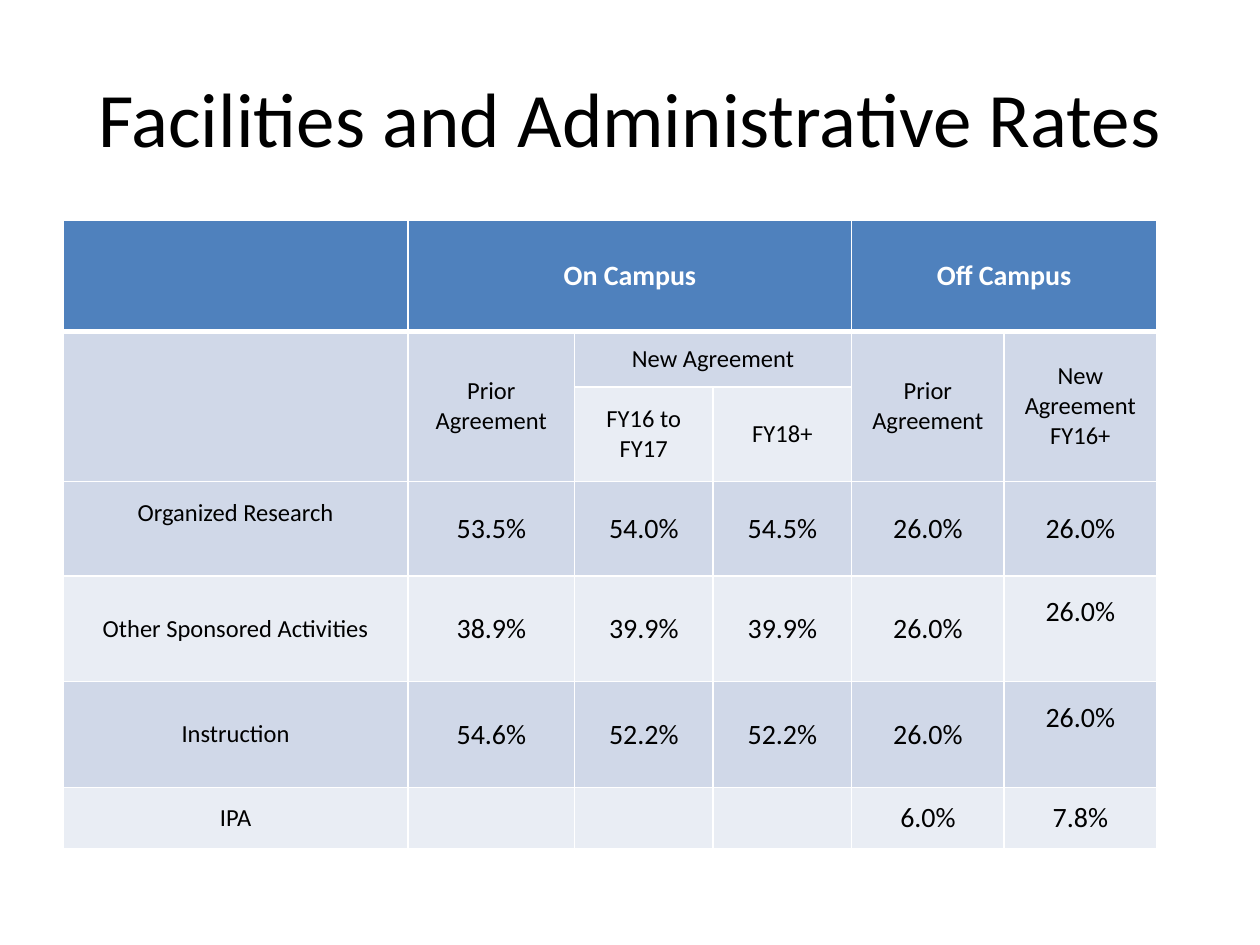
from lxml.etree import SubElement
from pptx import Presentation
from pptx.dml.color import RGBColor
from pptx.enum.text import MSO_ANCHOR as Anchor, PP_ALIGN as Align
from pptx.oxml.ns import qn
from pptx.util import Inches, Pt

# Content
TITLE = "Facilities and Administrative Rates"
RATES = [
    ["", "On Campus", "", "", "Off Campus", ""],
    ["", "Prior Agreement", "New Agreement", "", "Prior Agreement", "New Agreement FY16+"],
    ["", "", "FY16 to FY17", "FY18+", "", ""],
    ["Organized Research", "53.5%", "54.0%", "54.5%", "26.0%", "26.0%"],
    ["Other Sponsored Activities", "38.9%", "39.9%", "39.9%", "26.0%", "26.0%"],
    ["Instruction", "54.6%", "52.2%", "52.2%", "26.0%", "26.0%"],
    ["IPA", "", "", "", "6.0%", "7.8%"],
]
# First and last cell of each merged area, as (row, column)
MERGES = [((0, 1), (0, 3)), ((0, 4), (0, 5)), ((1, 2), (1, 3))]
MERGES += [((1, column), (2, column)) for column in (0, 1, 4, 5)]
# Extra bottom margin of the cells whose text sits higher
RAISED = {(3, 0): 0.24, (4, 5): 0.27, (5, 5): 0.27}

# Style
FONT = "Calibri"
COLUMN_WIDTHS = [2.74, 1.32, 1.1, 1.1, 1.21, 1.21]
ROW_HEIGHTS = [0.88, 0.44, 0.75, 0.75, 0.84, 0.84, 0.49]
HEADER, DARK_BAND, LIGHT_BAND = "4F81BD", "D0D8E8", "E9EDF4"
WHITE, BLACK = "FFFFFF", "000000"


def color(hex_value):
    return RGBColor.from_string(hex_value)


def style_text(paragraph, size, text_color, bold=False):
    paragraph.alignment = Align.CENTER
    font = paragraph.font
    font.name, font.size, font.bold = FONT, Pt(size), bold
    font.color.rgb = color(text_color)


def set_borders(cell, top=1, bottom=1):
    properties = cell._tc.get_or_add_tcPr()
    for side, width in (("L", 1), ("R", 1), ("T", top), ("B", bottom)):
        line = SubElement(properties, qn(f"a:ln{side}"), w=str(Pt(width)))
        fill = SubElement(line, qn("a:solidFill"))
        SubElement(fill, qn("a:srgbClr"), val=WHITE)


presentation = Presentation()
presentation.slide_width, presentation.slide_height = Inches(10), Inches(7.5)
slide = presentation.slides.add_slide(presentation.slide_layouts[5])

# Title
title = slide.shapes.title
title.left, title.top, title.width, title.height = map(Inches, (0.5, 0.3, 9, 1.25))
title.text_frame.text = TITLE
title.text_frame.vertical_anchor = Anchor.MIDDLE
style_text(title.text_frame.paragraphs[0], 44, BLACK)

# Rates table
table = slide.shapes.add_table(
    len(RATES), len(COLUMN_WIDTHS), Inches(0.5), Inches(1.75),
    Inches(sum(COLUMN_WIDTHS)), Inches(sum(ROW_HEIGHTS))).table
for column, width in zip(table.columns, COLUMN_WIDTHS):
    column.width = Inches(width)
for row, height in zip(table.rows, ROW_HEIGHTS):
    row.height = Inches(height)

for r, labels in enumerate(RATES):
    band = HEADER if r == 0 else DARK_BAND if r % 2 else LIGHT_BAND
    for c, label in enumerate(labels):
        cell = table.cell(r, c)
        set_borders(cell, top=3 if r == 1 else 1, bottom=3 if r == 0 else 1)
        cell.fill.solid()
        cell.fill.fore_color.rgb = color(band)
        cell.vertical_anchor = Anchor.MIDDLE
        if (r, c) in RAISED:
            cell.margin_bottom = Inches(0.05 + RAISED[r, c])
        if label:
            cell.text = label
            size = 16 if r == 0 or label.endswith("%") else 14
            style_text(cell.text_frame.paragraphs[0], size,
                       BLACK if r else WHITE, bold=r == 0)

for first, last in MERGES:
    table.cell(*first).merge(table.cell(*last))

presentation.save("out.pptx")
